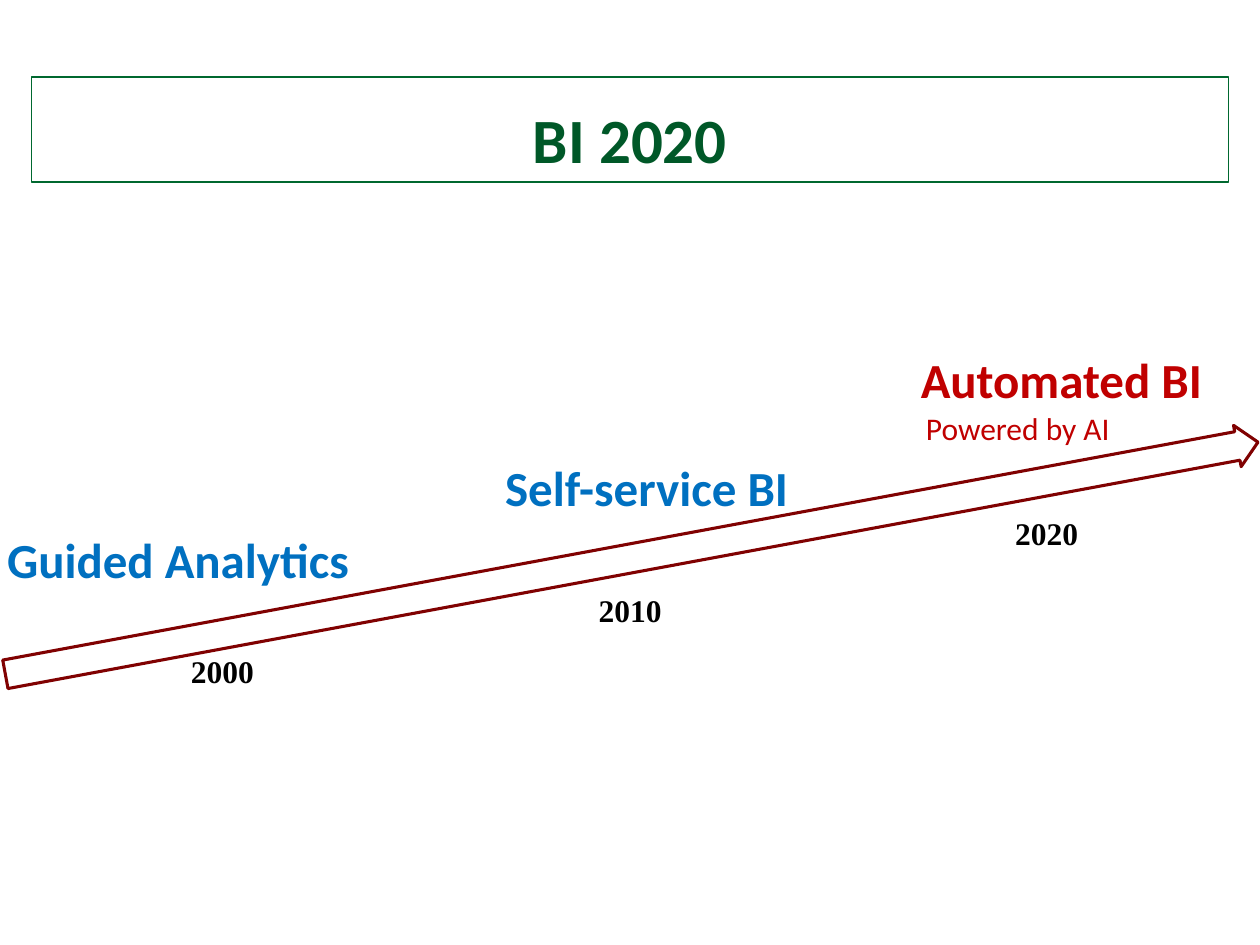
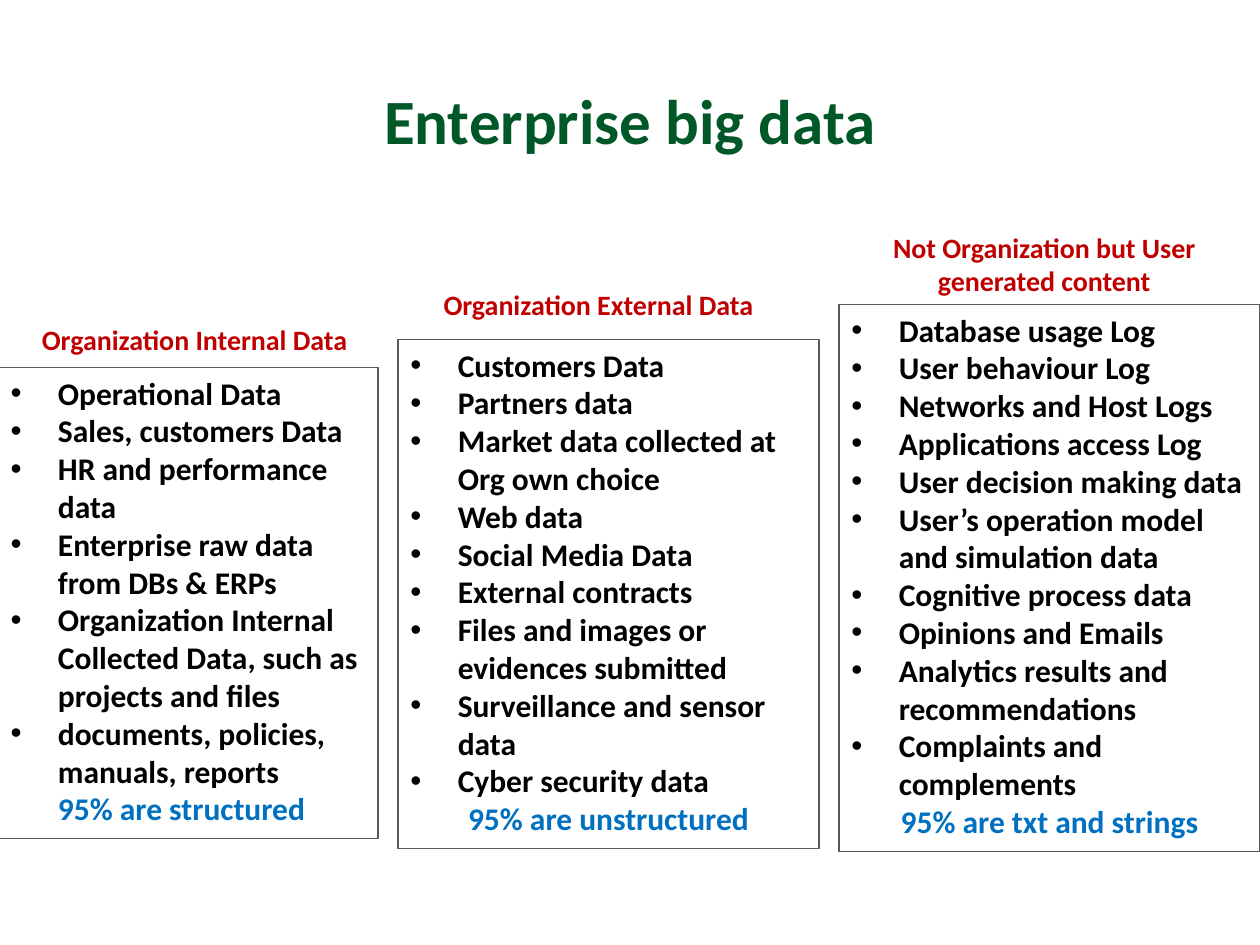
from dataclasses import dataclass

from lxml import etree
from pptx import Presentation
from pptx.dml.color import RGBColor
from pptx.enum.shapes import MSO_SHAPE
from pptx.enum.text import MSO_ANCHOR, PP_ALIGN
from pptx.oxml.ns import qn
from pptx.util import Pt

LEFT, CENTER = PP_ALIGN.LEFT, PP_ALIGN.CENTER
TOP, MIDDLE, BOTTOM = MSO_ANCHOR.TOP, MSO_ANCHOR.MIDDLE, MSO_ANCHOR.BOTTOM
RECT, RIGHT_ARROW = MSO_SHAPE.RECTANGLE, MSO_SHAPE.RIGHT_ARROW

SANS, SERIF = "Calibri", "Times New Roman"
BLACK, RED, BLUE = "000000", "C00000", "0070C0"
GREEN, FRAME_GREEN, MAROON, GREY = "005828", "00682F", "800101", "595959"
BULLET_INDENT = Pt(27)


@dataclass(frozen=True)
class Box:
    x: float
    y: float
    w: float
    h: float

    def emu(self) -> tuple[int, ...]:
        return tuple(Pt(v) for v in (self.x, self.y, self.w, self.h))


@dataclass(frozen=True)
class Style:
    size: float
    color: str
    bold: bool = True
    font: str = SANS
    align: PP_ALIGN = LEFT


@dataclass(frozen=True)
class Label:
    text: str
    box: Box
    style: Style


@dataclass(frozen=True)
class DataColumn:
    heading: str
    heading_box: Box
    list_box: Box
    items: tuple[str, ...]
    summary: Style
    summary_text: str


TITLE = Style(36, GREEN, align=CENTER)
ERA = Style(28, BLUE, align=CENTER)
YEAR = Style(18, BLACK, font=SERIF)
HEADING = Style(16, RED, align=CENTER)
ITEM = Style(18, BLACK)
SUMMARY_LEFT = Style(18, BLUE)
SUMMARY_CENTER = Style(18, BLUE, align=CENTER)

ERA_LABELS = (
    Label("Automated BI", Box(479, 196, 255, 41), Style(28, RED, align=CENTER)),
    Label("Guided Analytics", Box(-3, 299, 230, 41), Style(28, BLUE)),
    Label("Self-service BI", Box(216, 258, 307, 41), ERA),
    Label("2000", Box(102, 369, 77, 29), YEAR),
    Label("2010", Box(335, 334, 77, 29), YEAR),
    Label("2020", Box(573, 290, 77, 29), YEAR),
    Label("Powered by AI", Box(522, 230, 168, 29), Style(18, RED, bold=False)),
)

DATA_COLUMNS = (
    DataColumn(
        "Organization Internal Data",
        Box(6.5, 181, 209.5, 27),
        Box(-1, 210, 217, 269),
        (
            "Operational Data",
            "Sales, customers Data",
            "HR and performance data",
            "Enterprise raw data from DBs & ERPs",
            "Organization Internal Collected Data, such as projects and files",
            "documents, policies, manuals, reports",
        ),
        SUMMARY_LEFT,
        "95% are structured",
    ),
    DataColumn(
        "Organization External Data",
        Box(243.5, 160.5, 197, 27),
        Box(227.5, 194, 240.5, 291),
        (
            "Customers Data",
            "Partners data",
            "Market data collected at Org own choice",
            "Web data",
            "Social Media Data",
            "External contracts",
            "Files and images or evidences submitted",
            "Surveillance and sensor data",
            "Cyber security data",
        ),
        SUMMARY_CENTER,
        "95% are unstructured",
    ),
    DataColumn(
        "Not Organization but User generated content",
        Box(476.5, 128, 240.5, 46),
        Box(479.5, 174, 240.5, 312.5),
        (
            "Database usage Log",
            "User behaviour Log",
            "Networks and Host Logs",
            "Applications access Log",
            "User decision making data",
            "User’s operation model and simulation data",
            "Cognitive process data",
            "Opinions and Emails",
            "Analytics results and recommendations",
            "Complaints and complements",
        ),
        SUMMARY_CENTER,
        "95% are txt and strings",
    ),
)


def rgb(color: str) -> RGBColor:
    return RGBColor.from_string(color)


def style_paragraph(p, style: Style) -> None:
    p.alignment = style.align
    for r in p.runs:
        r.font.name = style.font
        r.font.size = Pt(style.size)
        r.font.bold = style.bold
        r.font.color.rgb = rgb(style.color)


def set_indent(p, bullet: bool) -> None:
    ppr = p._p.get_or_add_pPr()
    ppr.set("marL", str(BULLET_INDENT))
    if bullet:
        ppr.set("indent", str(-BULLET_INDENT))
        etree.SubElement(ppr, qn("a:buFont")).set("typeface", "Arial")
        etree.SubElement(ppr, qn("a:buChar")).set("char", "•")


def add_text(slide, label: Label, anchor: MSO_ANCHOR = TOP):
    sp = slide.shapes.add_textbox(*label.box.emu())
    tf = sp.text_frame
    tf.word_wrap = True
    tf.vertical_anchor = anchor
    tf.text = label.text
    style_paragraph(tf.paragraphs[0], label.style)
    return sp


def add_outline(slide, shape: MSO_SHAPE, box: Box, color: str, width: float):
    sp = slide.shapes.add_shape(shape, *box.emu())
    sp.shadow.inherit = False
    sp.fill.background()
    sp.line.color.rgb = rgb(color)
    sp.line.width = Pt(width)
    return sp


def add_data_column(slide, column: DataColumn) -> None:
    add_text(slide, Label(column.heading, column.heading_box, HEADING))
    tf = add_outline(slide, RECT, column.list_box, GREY, 0.75).text_frame
    tf.word_wrap = True
    tf.vertical_anchor = TOP
    tf.text = "\n".join((*column.items, column.summary_text))
    *items, summary = tf.paragraphs
    for p in items:
        set_indent(p, bullet=True)
        style_paragraph(p, ITEM)
    if column.summary.align == LEFT:
        set_indent(summary, bullet=False)
    style_paragraph(summary, column.summary)


def build_timeline(slide) -> None:
    title = add_text(slide, Label("BI 2020", Box(18, 44, 684, 60), TITLE), BOTTOM)
    title.line.color.rgb = rgb(FRAME_GREEN)
    title.line.width = Pt(0.75)
    arrow = add_outline(slide, RIGHT_ARROW, Box(-3, 307, 728, 24), MAROON, 1.75)
    arrow.adjustments[0] = 0.69
    arrow.adjustments[1] = 0.5
    arrow.rotation = -10.5
    for label in ERA_LABELS:
        add_text(slide, label)


def build_big_data(slide) -> None:
    add_text(slide, Label("Enterprise big data", Box(0, 30, 720, 76), TITLE), MIDDLE)
    for column in DATA_COLUMNS:
        add_data_column(slide, column)


def main() -> None:
    prs = Presentation()
    prs.slide_width, prs.slide_height = Pt(720), Pt(540)
    blank = prs.slide_layouts[6]
    for build in (build_timeline, build_big_data):
        build(prs.slides.add_slide(blank))
    prs.save("out.pptx")


if __name__ == "__main__":
    main()
